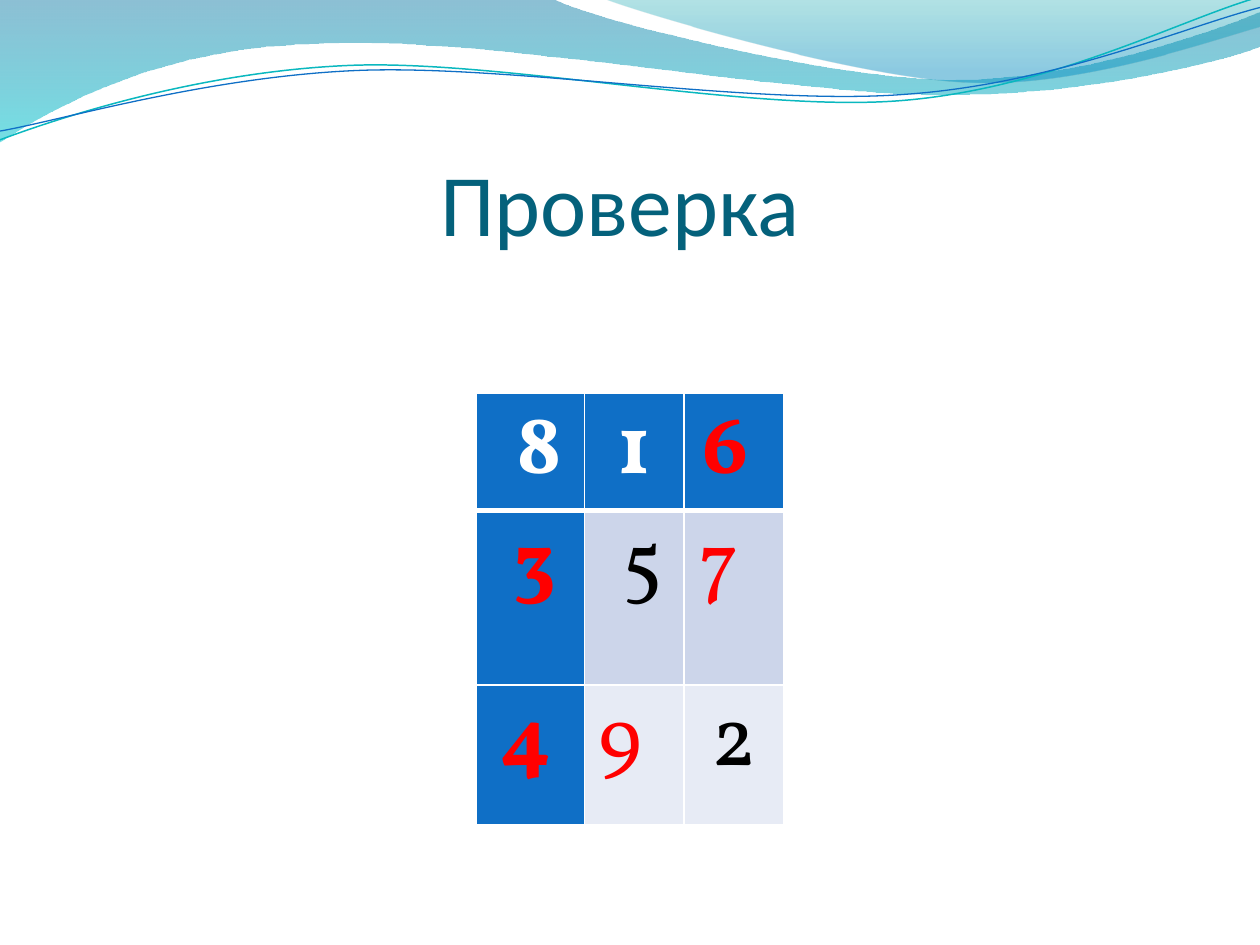
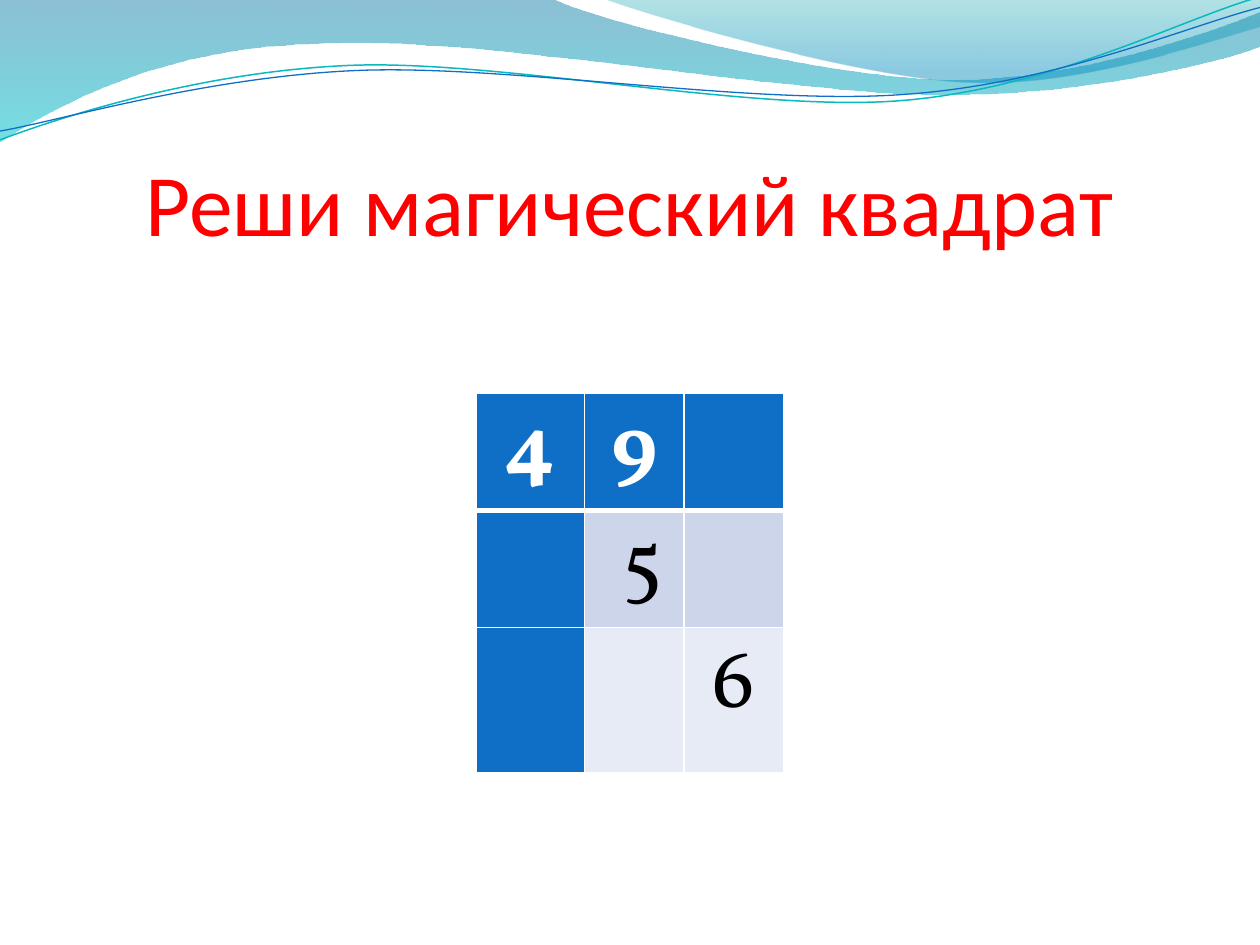
from dataclasses import dataclass
from itertools import chain, islice
from math import cos, radians, sin

from lxml.etree import SubElement
from pptx import Presentation
from pptx.dml.color import RGBColor as RGB
from pptx.enum.text import MSO_ANCHOR as Anchor, MSO_AUTO_SIZE as AutoSize, PP_ALIGN as Align
from pptx.oxml.ns import qn
from pptx.util import Pt

Point = tuple[float, float]


@dataclass(frozen=True)
class Theme:
    blue: str = "0F6FC6"
    teal: str = "0AB8BF"
    title: str = "04617B"
    red: str = "FF0000"
    black: str = "000000"
    white: str = "FFFFFF"
    bands: tuple[str, str] = ("CCD5EA", "E7EBF5")
    title_font: str = "Calibri"
    digit_font: str = "Vollkorn"
    title_size: float = 50
    digit_size: float = 48


T = Theme()


@dataclass(frozen=True)
class Stop:
    color: str
    position: float
    alpha: int  # percent


@dataclass(frozen=True)
class Wave:
    """Outline of segments: one point is a line, three points are a Bezier curve."""
    start: Point
    segments: tuple[tuple[Point, ...], ...]
    stops: tuple[Stop, ...] = ()
    color: str = ""
    weight: float = 0
    pivot: Point = (0, 0)
    rotation: float = 0


@dataclass(frozen=True)
class Digit:
    text: str = ""
    color: str = ""
    indent: float = 0  # extra left margin, or right margin if negative
    align: Align = Align.CENTER


@dataclass(frozen=True)
class Puzzle:
    title: str
    title_color: str
    row_heights: tuple[float, ...]
    grid: tuple[tuple[Digit, ...], ...]


TILT = -2.7
WAVES = (
    Wave((0, 0), (
        ((316.8, -0.5),),
        ((342.7, 12.2), (478.1, 45.4), (545.8, 45.4)),
        ((614.2, 45.4), (689.8, 18.7), (720, 6.5)),
        ((720.7, 25.9),),
        ((707.8, 31.7), (626.4, 54.7), (537.1, 54)),
        ((447.8, 54), (275, 20.2), (185, 24.5)),
        ((92.9, 25.9), (33.1, 59.8), (-0.7, 81.4)),
        ((0, 0),),
    ), stops=(Stop("0074A1", 0, 45), Stop("00C6CF", 1, 55))),
    Wave((344.9, -0.7), (
        ((366.5, 7.9), (491, 44.6), (553.7, 46.8)),
        ((616.3, 49.7), (691.9, 23), (720, 15.1)),
        ((720, 0),),
        ((344.9, -0.7),),
    ), stops=(Stop("00A1A9", 0, 30), Stop("008BBF", 0.8, 45))),
    Wave((0, 79.9), (
        ((34.6, 67), (113.8, 41), (199.4, 37.4)),
        ((284.4, 33.8), (427, 64.1), (513.4, 57.6)),
        ((599.8, 51.1), (675.4, 10.8), (718.6, -1.4)),
    ), color=T.teal, weight=0.85, pivot=(359.3, 41.4), rotation=TILT),
    Wave((0, 74.9), (
        ((33.8, 69.1), (118.1, 43.9), (203.8, 40.3)),
        ((290.2, 36.7), (429.8, 60.5), (516.2, 54)),
        ((602.6, 48.2), (677.5, 15.1), (720, 4.3)),
    ), color=T.blue, weight=0.75, pivot=(359.6, 42.5), rotation=TILT),
)

PUZZLES = (
    Puzzle("Проверка ", T.title, (66, 100, 80), (
        (Digit("8", T.white, 10), Digit("1", T.white), Digit("6", T.red, -10)),
        (Digit("3", T.red, 5), Digit("5", T.black, 10), Digit("7", T.red, 3, Align.LEFT)),
        (Digit("4", T.red, -5), Digit("9", T.red, 3, Align.LEFT), Digit("2", T.black)),
    )),
    Puzzle("Реши магический квадрат", T.red, (66, 67, 83), (
        (Digit("4", T.white), Digit("9", T.white), Digit()),
        (Digit(), Digit("5", T.black, 10), Digit()),
        (Digit(), Digit(), Digit("6", T.black)),
    )),
)

TABLE_LEFT, TABLE_TOP = 272.2, 224.7
COLUMN_WIDTHS = (61.8, 57, 57)
CELL_MARGIN = 5


def rgb(color: str) -> RGB:
    return RGB.from_string(color)


def unrotate(point: Point, wave: Wave) -> Point:
    """Place a point where it lies before the shape is rotated."""
    angle = radians(-wave.rotation)
    dx, dy = point[0] - wave.pivot[0], point[1] - wave.pivot[1]
    return (Pt(wave.pivot[0] + dx * cos(angle) - dy * sin(angle)),
            Pt(wave.pivot[1] + dx * sin(angle) + dy * cos(angle)))


def bend(sp, wave: Wave) -> None:
    """Join each three line steps of a curved segment into one Bezier curve."""
    steps = iter(list(sp.element.iter(qn("a:lnTo"))))
    for segment in wave.segments:
        ops = list(islice(steps, len(segment)))
        if len(ops) == 3:
            outline = ops[0].getparent()
            curve = SubElement(outline, qn("a:cubicBezTo"))
            ops[0].addprevious(curve)
            for op in ops:
                curve.append(op[0])
                outline.remove(op)


def add_wave(slide, wave: Wave):
    builder = slide.shapes.build_freeform(*unrotate(wave.start, wave))
    builder.add_line_segments(
        [unrotate(point, wave) for point in chain(*wave.segments)], close=bool(wave.stops))
    sp = builder.convert_to_shape()
    bend(sp, wave)
    sp.rotation = wave.rotation
    sp.shadow.inherit = False
    if not wave.stops:
        sp.fill.background()
        sp.line.color.rgb = rgb(wave.color)
        sp.line.width = Pt(wave.weight)
        return sp
    sp.line.fill.background()
    sp.fill.gradient()
    sp.fill.gradient_angle = 270
    for target, stop in zip(sp.fill.gradient_stops, wave.stops):
        target.color.rgb = rgb(stop.color)
        target.position = stop.position
    for clr, stop in zip(sp.element.iter(qn("a:srgbClr")), wave.stops):
        SubElement(clr, qn("a:alpha"), val=str(stop.alpha * 1000))
    return sp


def add_run(p, text: str, font: str, size: float, color: str, bold: bool = False) -> None:
    r = p.add_run()
    r.text = text
    r.font.name, r.font.size, r.font.bold = font, Pt(size), bold
    r.font.color.rgb = rgb(color)


def set_title(slide, puzzle: Puzzle) -> None:
    sp = slide.shapes.title
    sp.left, sp.top, sp.width, sp.height = Pt(36), Pt(55), Pt(648), Pt(90)
    tf = sp.text_frame
    tf.auto_size, tf.word_wrap = AutoSize.NONE, True
    tf.vertical_anchor = Anchor.BOTTOM
    tf.margin_left = tf.margin_right = tf.margin_bottom = 0
    tf.margin_top = Pt(3.6)
    p = tf.paragraphs[0]
    p.alignment = Align.CENTER
    add_run(p, puzzle.title, T.title_font, T.title_size, puzzle.title_color)


def set_borders(cell, row: int) -> None:
    """White rules, with a heavy one under the first row."""
    widths = {"L": 1, "R": 1, "T": 3 if row == 1 else 1, "B": 3 if row == 0 else 1}
    tc_pr = cell._tc.get_or_add_tcPr()
    for side, width in widths.items():
        ln = SubElement(tc_pr, qn(f"a:ln{side}"), w=str(Pt(width)))
        SubElement(SubElement(ln, qn("a:solidFill")), qn("a:srgbClr"), val=T.white)


def fill_cell(cell, digit: Digit, row: int, col: int) -> None:
    is_header = row == 0 or col == 0
    set_borders(cell, row)
    cell.fill.solid()
    cell.fill.fore_color.rgb = rgb(T.blue if is_header else T.bands[row - 1])
    cell.margin_left = Pt(CELL_MARGIN + max(digit.indent, 0))
    cell.margin_right = Pt(CELL_MARGIN + max(-digit.indent, 0))
    cell.margin_top = cell.margin_bottom = 0
    if digit.text:
        p = cell.text_frame.paragraphs[0]
        p.alignment = digit.align
        add_run(p, digit.text, T.digit_font, T.digit_size, digit.color, is_header)


def add_square(slide, puzzle: Puzzle) -> None:
    frame = slide.shapes.add_table(
        len(puzzle.grid), len(COLUMN_WIDTHS), Pt(TABLE_LEFT), Pt(TABLE_TOP),
        Pt(sum(COLUMN_WIDTHS)), Pt(sum(puzzle.row_heights)))
    table = frame.table
    table.first_row = table.horz_banding = False
    for column, width in zip(table.columns, COLUMN_WIDTHS):
        column.width = Pt(width)
    for row, height in zip(table.rows, puzzle.row_heights):
        row.height = Pt(height)
    for i, digits in enumerate(puzzle.grid):
        for j, digit in enumerate(digits):
            fill_cell(table.cell(i, j), digit, i, j)


def main() -> None:
    prs = Presentation()
    prs.slide_width, prs.slide_height = Pt(720), Pt(540)
    layout = prs.slide_layouts.get_by_name("Title Only")
    slides = [prs.slides.add_slide(layout) for _ in PUZZLES]

    # Shared waves: drawn once, then moved to the layout
    for wave in WAVES:
        layout.shapes.element.append(add_wave(slides[0], wave).element)

    # Title and magic square of each slide
    for slide, puzzle in zip(slides, PUZZLES):
        set_title(slide, puzzle)
        add_square(slide, puzzle)
    prs.save("out.pptx")


if __name__ == "__main__":
    main()
